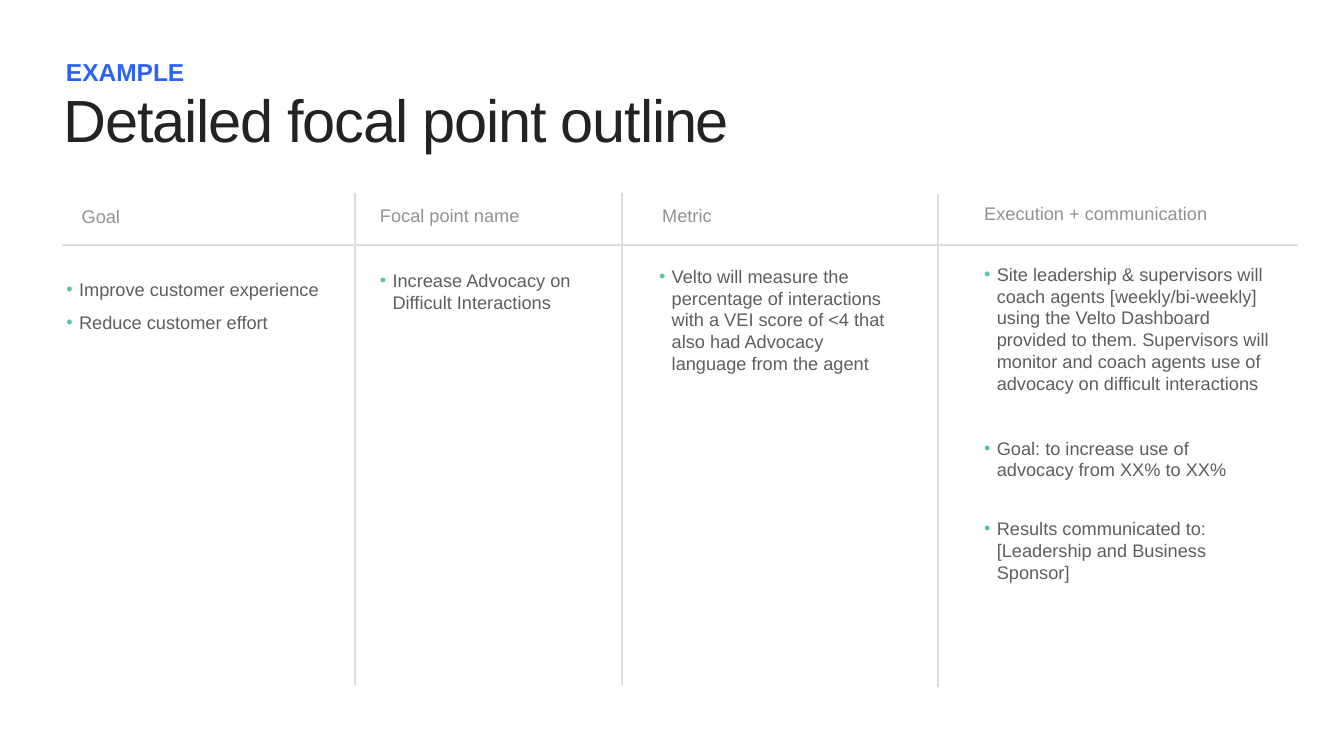
from pptx import Presentation
from pptx.dml.color import RGBColor
from pptx.enum.shapes import MSO_CONNECTOR, MSO_SHAPE
from pptx.enum.text import MSO_ANCHOR, PP_ALIGN
from pptx.oxml.ns import qn
from pptx.util import Pt
from lxml.etree import SubElement

PX = 9144  # 100 px to the inch
FONT = "Arial"
BLUE, INK, GREY, BODY = "2A63F5", "232323", "929292", "5E5E5E"
RULE, WHITE, GREEN = "DDDDDD", "FFFFFF", "5AC5A8"
INSET, INDENT = 6, 25

# Content: boxes are left, top, width, height
EYEBROW = ("EXAMPLE", (125, 109, 500, 65))
TITLE = ("Detailed focal point outline", (120, 186, 1683, 126))
HEADERS = [
    ("Goal", (156, 401, 162, 58)),
    ("Focal point name", (748, 399, 355, 72)),
    ("Metric", (1308, 399, 271, 63)),
    ("Execution + communication", (1947, 396, 499, 63)),
]
GOALS = (["Improve customer experience", "Reduce customer effort"],
         (126, 537, 513, 117))
DETAILS = [
    ("Increase Advocacy on Difficult Interactions", (748, 529, 422, 99)),
    ("Velto will measure the percentage of interactions with a VEI score of "
     "<4 that also had Advocacy language from the agent",
     (1302, 520, 464, 230)),
    ("Site leadership & supervisors will coach agents [weekly/bi-weekly] using "
     "the Velto Dashboard provided to them. Supervisors will monitor and coach "
     "agents use of advocacy on difficult interactions",
     (1947, 516, 593, 274)),
    ("Goal: to increase use of advocacy from XX% to XX%",
     (1947, 861, 518, 96)),
    ("Results communicated to: [Leadership and Business Sponsor]",
     (1947, 1021, 518, 139)),
]
LINES = [  # x1, y1, x2, y2
    (704, 382, 704, 1360),
    (1235, 382, 1235, 1360),
    (1861, 385, 1861, 1363),
    (124, 487, 2575, 487),
]


def px(*values):
    return [v * PX for v in values]


def rgb(color):
    return RGBColor.from_string(color)


def write(sp, lines, size, color, bold=False, anchor=MSO_ANCHOR.TOP, spacing=1.0):
    tf = sp.text_frame
    tf.word_wrap = True
    tf.vertical_anchor = anchor
    tf.margin_left = tf.margin_right = tf.margin_top = tf.margin_bottom = INSET * PX
    tf.text = "\n".join(lines)
    for p in tf.paragraphs:
        p.alignment = PP_ALIGN.LEFT
        p.line_spacing = spacing
        font = p.runs[0].font
        font.name, font.size, font.bold = FONT, Pt(size), bold
        font.color.rgb = rgb(color)
    return tf


def add_label(s, text, box, size, color, **style):
    return write(s.shapes.add_textbox(*px(*box)), [text], size, color, **style)


def add_bullets(s, lines, box, **style):
    sp = s.shapes.add_shape(MSO_SHAPE.RECTANGLE, *px(*box))
    sp.shadow.inherit = False
    sp.line.fill.background()
    sp.fill.solid()
    sp.fill.fore_color.rgb = rgb(WHITE)
    fill = sp._element.spPr.find(qn("a:solidFill"))[0]
    SubElement(fill, qn("a:alpha"), val="65000")
    tf = write(sp, lines, 26, BODY, **style)
    for p in tf.paragraphs:
        pPr = p._p.get_or_add_pPr()
        pPr.set("marL", str(INDENT * PX))
        pPr.set("indent", str(-INDENT * PX))
        SubElement(SubElement(pPr, qn("a:buClr")), qn("a:srgbClr"), val=GREEN)
        SubElement(pPr, qn("a:buFont"), typeface=FONT)
        SubElement(pPr, qn("a:buChar"), char="•")
    return tf


def main():
    prs = Presentation()
    prs.slide_width, prs.slide_height = px(2667, 1500)
    s = prs.slides.add_slide(prs.slide_layouts[5])

    # Title and eyebrow
    text, box = TITLE
    title = s.shapes.title
    title.left, title.top, title.width, title.height = px(*box)
    tf = write(title, [text], 85, INK, spacing=0.8)
    tf.paragraphs[0].runs[0].font._element.set("spc", "-170")
    add_label(s, *EYEBROW, 35, BLUE, bold=True, anchor=MSO_ANCHOR.MIDDLE)

    # Column dividers and header rule
    for ends in LINES:
        line = s.shapes.add_connector(MSO_CONNECTOR.STRAIGHT, *px(*ends))
        line.line.color.rgb = rgb(RULE)
        line.line.width = Pt(3)
        SubElement(line._element.spPr, qn("a:effectLst"))

    # Column headers
    for text, box in HEADERS:
        add_label(s, text, box, 26, GREY)

    # Column contents
    goals = add_bullets(s, *GOALS, anchor=MSO_ANCHOR.MIDDLE, spacing=1.5)
    goals.word_wrap = False
    for text, box in DETAILS:
        add_bullets(s, [text], box)

    prs.save("out.pptx")


if __name__ == "__main__":
    main()
